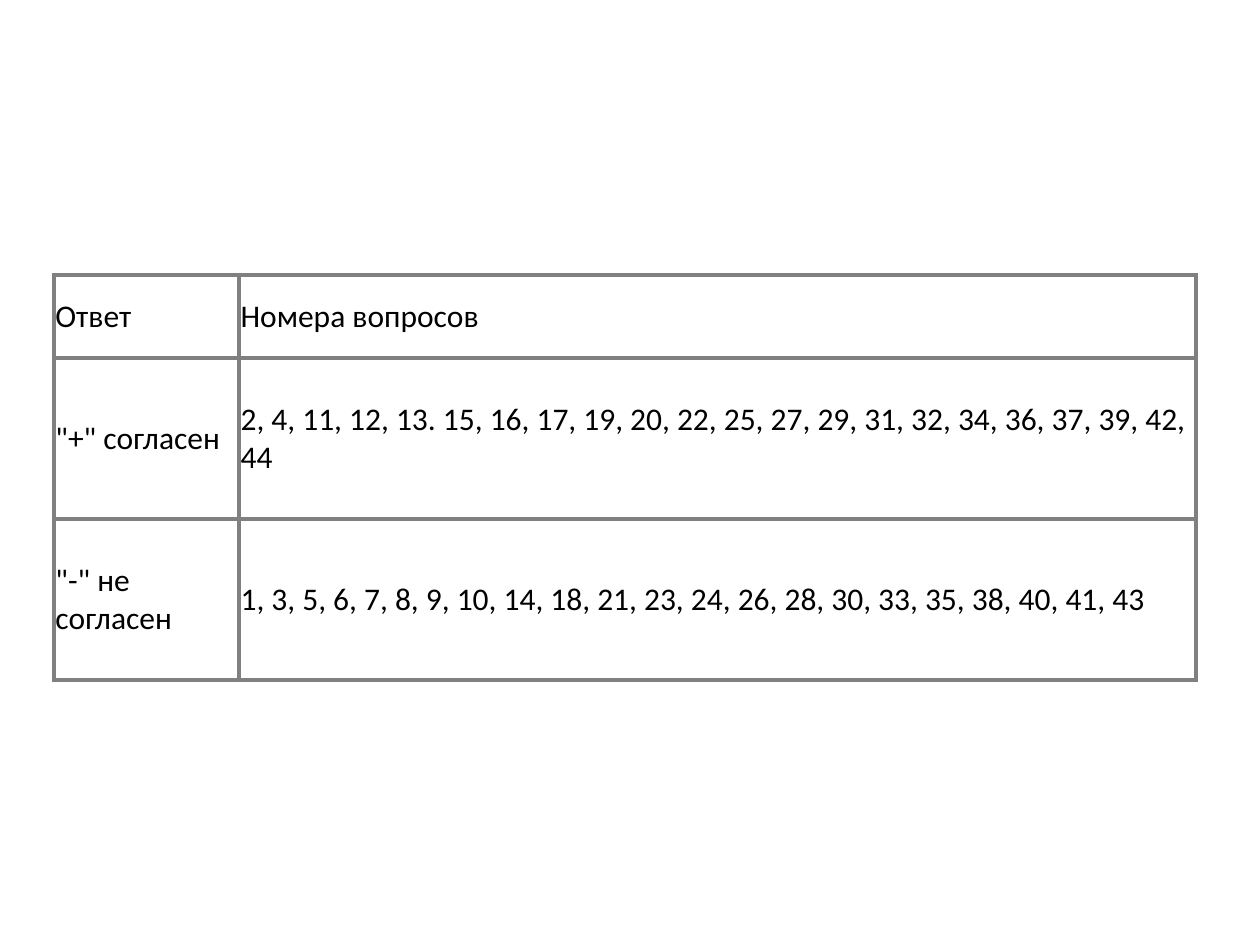
"""Build a slide with the answer key of a questionnaire."""
from lxml import etree
from pptx import Presentation, util as u
from pptx.dml.color import RGBColor
from pptx.enum import text
from pptx.oxml.ns import qn

COLORS = {"text": "000000", "border": "808080"}
COLS = [1.47, 7.59]
ROWS = [0.66, 1.28, 1.28]
RIGHT_INSETS = [0.1, 0.01]
ANSWERS = [
    ("Ответ", "Номера вопросов"),
    ('"+" согласен', "2, 4, 11, 12, 13. 15, 16, 17, 19, 20, 22, 25, 27, 29, 31, 32, 34, 36, 37, 39, 42, 44"),
    ('"-" не согласен', "1, 3, 5, 6, 7, 8, 9, 10, 14, 18, 21, 23, 24, 26, 28, 30, 33, 35, 38, 40, 41, 43"),
]


def set_borders(cell, color, width):
    """Draw a solid line on all four sides of a cell."""
    tcPr = cell._tc.get_or_add_tcPr()
    for i, side in enumerate(("lnL", "lnR", "lnT", "lnB")):
        ln = etree.Element(qn(f"a:{side}"), w=str(u.Pt(width)))
        fill = etree.SubElement(ln, qn("a:solidFill"))
        etree.SubElement(fill, qn("a:srgbClr"), val=color)
        tcPr.insert(i, ln)


def fill_cell(cell, value, right_inset):
    """Write and format one table cell."""
    cell.fill.background()
    set_borders(cell, COLORS["border"], 2.6)
    cell.margin_left = cell.margin_top = cell.margin_bottom = u.Inches(0.01)
    cell.margin_right = u.Inches(right_inset)
    cell.vertical_anchor = text.MSO_ANCHOR.MIDDLE
    cell.text_frame.text = value
    font = cell.text_frame.paragraphs[0].runs[0].font
    font.name, font.size, font.bold = "Calibri", u.Pt(18), False
    font.color.rgb = RGBColor.from_string(COLORS["text"])


def add_answer_table(s, left, top):
    """Add the table of answers and question numbers."""
    size = u.Inches(sum(COLS)), u.Inches(sum(ROWS))
    table = s.shapes.add_table(len(ROWS), len(COLS), u.Inches(left), u.Inches(top), *size).table
    table.first_row = table.horz_banding = False
    for col, width in zip(table.columns, COLS):
        col.width = u.Inches(width)
    for row, height, values in zip(table.rows, ROWS, ANSWERS):
        row.height = u.Inches(height)
        for cell, value, inset in zip(row.cells, values, RIGHT_INSETS):
            fill_cell(cell, value, inset)


def main():
    """Create and save the presentation."""
    prs = Presentation()
    prs.slide_width, prs.slide_height = u.Inches(10), u.Inches(7.5)
    s = prs.slides.add_slide(prs.slide_layouts[6])
    add_answer_table(s, 0.43, 2.18)
    prs.save("out.pptx")


if __name__ == "__main__":
    main()
